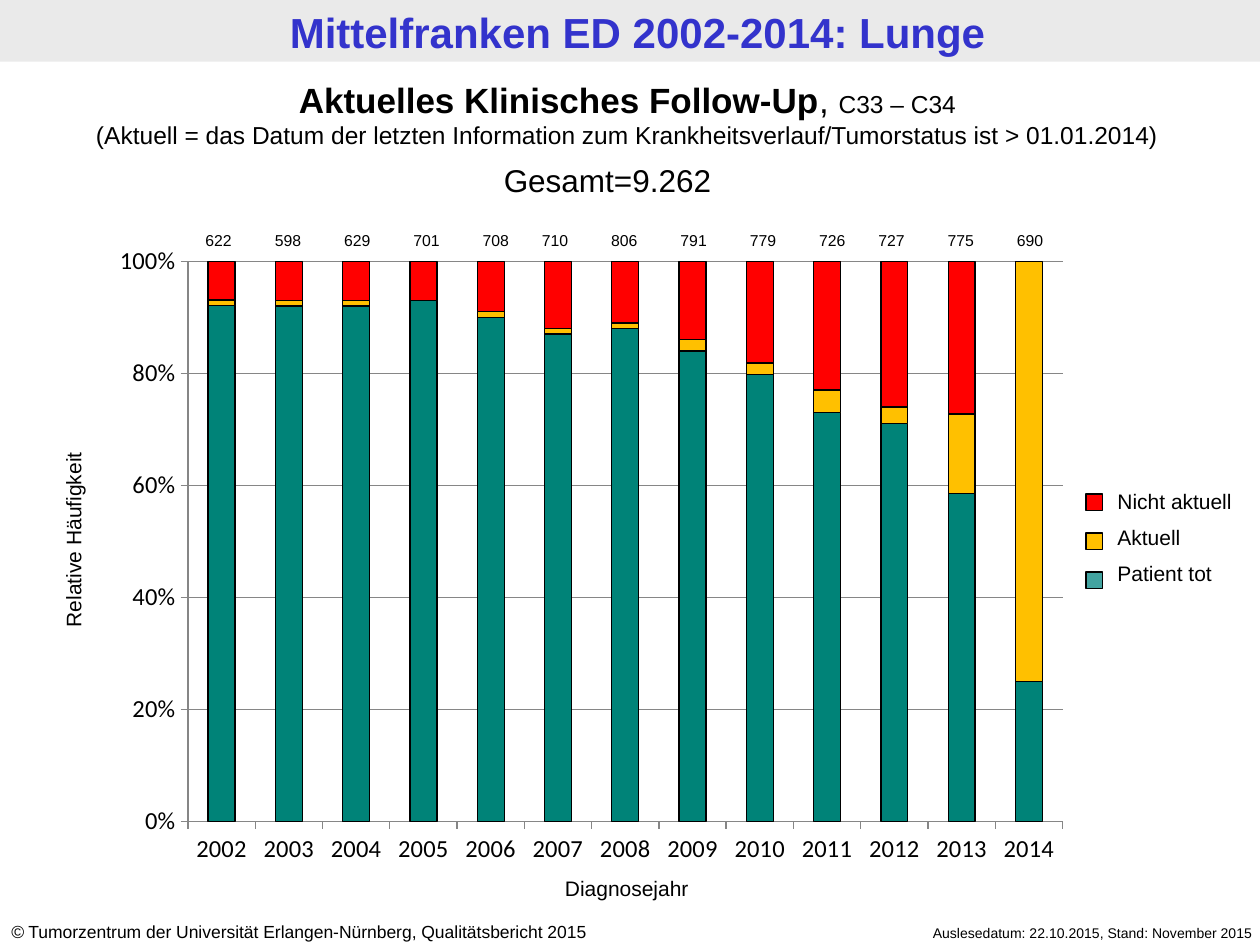
from dataclasses import dataclass

from lxml import etree
from pptx import Presentation
from pptx.chart.data import CategoryChartData
from pptx.dml.color import RGBColor
from pptx.enum.chart import XL_CHART_TYPE, XL_TICK_MARK
from pptx.enum.shapes import MSO_SHAPE
from pptx.enum.text import MSO_ANCHOR, MSO_AUTO_SIZE, PP_ALIGN
from pptx.oxml.ns import qn
from pptx.util import Inches, Pt

LEFT, CENTER, RIGHT = PP_ALIGN.LEFT, PP_ALIGN.CENTER, PP_ALIGN.RIGHT
RECT = MSO_SHAPE.RECTANGLE
STACKED = XL_CHART_TYPE.COLUMN_STACKED_100
OUTSIDE = XL_TICK_MARK.OUTSIDE


@dataclass(frozen=True)
class Theme:
    font: str = "Arial"
    chart_font: str = "Calibri"
    ink: str = "000000"
    title: str = "3333CC"
    band: str = "EAEAEA"
    grid: str = "868686"
    dead: str = "008378"
    dead_key: str = "008380"
    current: str = "FFC000"
    outdated: str = "FF0000"
    title_size: int = 24
    heading_size: int = 20
    total_size: int = 18
    note_size: int = 14
    label_size: int = 12
    source_size: int = 10
    count_size: int = 9
    date_size: int = 8
    outline: float = 0.75


T = Theme()
YEARS = [str(year) for year in range(2002, 2015)]
COUNTS = [622, 598, 629, 701, 708, 710, 806, 791, 779, 726, 727, 775, 690]
SERIES = [
    ("Patient tot", T.dead, [93, 92, 92, 93, 90, 87, 88, 84, 79, 73, 71, 58, 25]),
    ("Aktuell", T.current, [1, 1, 1, 0, 1, 1, 1, 2, 2, 4, 3, 14, 75]),
    ("Nicht aktuell", T.outdated, [7, 7, 7, 7, 9, 12, 11, 14, 18, 23, 26, 27, 0]),
]


def rgb(value):
    return RGBColor.from_string(value)


def add_run(p, text, size, bold=False, italic=False, color=T.ink):
    r = p.add_run()
    r.text = text
    r.font.name = T.font
    r.font.size = Pt(size)
    r.font.bold = bold
    r.font.italic = italic
    r.font.color.rgb = rgb(color)


def add_text(slide, box, lines, align=LEFT, gap=0):
    sp = slide.shapes.add_textbox(*map(Inches, box))
    tf = sp.text_frame
    tf.word_wrap = True
    for i, runs in enumerate(lines):
        p = tf.add_paragraph() if i else tf.paragraphs[0]
        p.alignment = align
        if i and gap:
            p.space_before = Pt(gap)
        for run in runs:
            add_run(p, *run)
    return sp


def add_rect(slide, box, fill, outlined=True):
    sp = slide.shapes.add_shape(RECT, *map(Inches, box))
    sp.shadow.inherit = False
    sp.fill.solid()
    sp.fill.fore_color.rgb = rgb(fill)
    if outlined:
        sp.line.color.rgb = rgb(T.ink)
        sp.line.width = Pt(T.outline)
    else:
        sp.line.fill.background()
    return sp


def add_header(slide, box):
    x, y, w, h = box
    band = add_rect(slide, box, T.band, outlined=False)
    title = slide.shapes.title
    title._element.addprevious(band._element)
    title.left, title.top = Inches(x + 0.06), Inches(y + 0.01)
    title.width, title.height = Inches(w), Inches(h)
    tf = title.text_frame
    tf.auto_size = MSO_AUTO_SIZE.NONE
    tf.vertical_anchor = MSO_ANCHOR.MIDDLE
    p = tf.paragraphs[0]
    p.alignment = CENTER
    add_run(p, "Mittelfranken ED 2002-2014: Lunge", T.title_size, True, False, T.title)


def add_heading(slide, box):
    x, y, w, h = box
    add_text(slide, (x, y, w, 0.67), [
        [("Aktuelles Klinisches Follow-Up", T.heading_size, True),
         (", ", T.heading_size), ("C33 – C34", T.note_size)],
        [("(Aktuell = das Datum der letzten Information zum "
          "Krankheitsverlauf/Tumorstatus ist > 01.01.2014)", T.note_size)],
    ], CENTER)
    add_text(slide, (x + 3.94, y + 0.66, 2.2, 0.4), [[("Gesamt=9.262", T.total_size)]])


def set_plot_area(chart, x, y, w, h):
    plot_area = chart._chartSpace.chart.plotArea
    for old in plot_area.findall(qn("c:layout")):
        plot_area.remove(old)
    layout = etree.Element(qn("c:layout"))
    manual = etree.SubElement(layout, qn("c:manualLayout"))
    settings = [("layoutTarget", "inner"), ("xMode", "edge"), ("yMode", "edge"),
                ("x", x), ("y", y), ("w", w), ("h", h)]
    for name, value in settings:
        etree.SubElement(manual, qn(f"c:{name}")).set("val", str(value))
    plot_area.insert(0, layout)


def add_followup_chart(slide, box):
    data = CategoryChartData()
    data.categories = YEARS
    for name, _, values in SERIES:
        data.add_series(name, values)
    chart = slide.shapes.add_chart(STACKED, *map(Inches, box), data).chart
    chart.has_title = False
    chart.has_legend = False
    chart.font.name = T.chart_font
    chart.font.size = Pt(T.note_size)
    chart.font.color.rgb = rgb(T.ink)
    set_plot_area(chart, 0.09, 0.04, 0.89, 0.87)
    plot = chart.plots[0]
    plot.gap_width, plot.overlap = 150, 100
    plot.vary_by_categories = False
    for series, (_, color, _) in zip(plot.series, SERIES):
        series.format.fill.solid()
        series.format.fill.fore_color.rgb = rgb(color)
        series.format.line.color.rgb = rgb(T.ink)
        series.format.line.width = Pt(T.outline)
    for axis in (chart.category_axis, chart.value_axis):
        axis.major_tick_mark = OUTSIDE
        axis.format.line.color.rgb = rgb(T.grid)
    axis = chart.value_axis
    axis.minimum_scale, axis.maximum_scale, axis.major_unit = 0, 1, 0.2
    axis.has_major_gridlines = True
    axis.major_gridlines.format.line.color.rgb = rgb(T.grid)
    axis.tick_labels.number_format = "0%"
    axis.tick_labels.number_format_is_linked = False


def add_axis_titles(slide, box):
    x, y, w, h = box
    sp = add_text(slide, (x - 1.41, y + 2.26, 2.41, 0.31),
                  [[("Relative Häufigkeit", T.label_size)]], CENTER)
    sp.rotation = 270
    add_text(slide, (x + 3.06, y + h - 0.08, 2.25, 0.31),
             [[("Diagnosejahr", T.label_size)]], CENTER)


def add_counts(slide, box):
    x, y, w, h = box
    for i, count in enumerate(COUNTS):
        left = x + i * w - 0.08 * (i // 5)
        add_text(slide, (left, y, w, h), [[(str(count), T.count_size)]], CENTER)


def add_legend(slide, box):
    x, y, w, h = box
    names = [[(name, T.label_size)] for name, _, _ in reversed(SERIES)]
    add_text(slide, (x + 0.15, y, w - 0.15, h), names, gap=6)
    for i, color in enumerate((T.outdated, T.current, T.dead_key)):
        key = add_rect(slide, (x, y + 0.09 + 0.31 * i, 0.13, 0.13), color)
    fill = key._element.spPr.find(qn("a:solidFill"))
    etree.SubElement(fill[0], qn("a:alpha")).set("val", "74000")


def add_footer(slide, box):
    x, y, w, h = box
    add_text(slide, (x - 0.01, y, 5.24, h), [
        [("©", T.source_size, False, True),
         (" Tumorzentrum der Universität Erlangen-Nürnberg, Qualitätsbericht 2015",
          T.source_size)],
    ])
    add_text(slide, (x + w - 3.35, y + 0.03, 3.39, 0.24),
             [[("Auslesedatum: 22.10.2015, Stand: November 2015", T.date_size)]], RIGHT)


def main():
    prs = Presentation()
    prs.slide_width, prs.slide_height = Inches(10), Inches(7.5)
    slide = prs.slides.add_slide(prs.slide_layouts[5])
    chart_box = (0.79, 1.87, 7.8, 5.11)
    add_header(slide, (0, 0, 10, 0.49))
    add_footer(slide, (0, 7.26, 10, 0.27))
    add_followup_chart(slide, chart_box)
    add_axis_titles(slide, chart_box)
    add_heading(slide, (-0.04, 0.57, 10.04, 1.06))
    add_counts(slide, (1.46, 1.78, 0.55, 0.25))
    add_legend(slide, (8.62, 3.83, 1.57, 0.91))
    prs.save("out.pptx")


if __name__ == "__main__":
    main()
